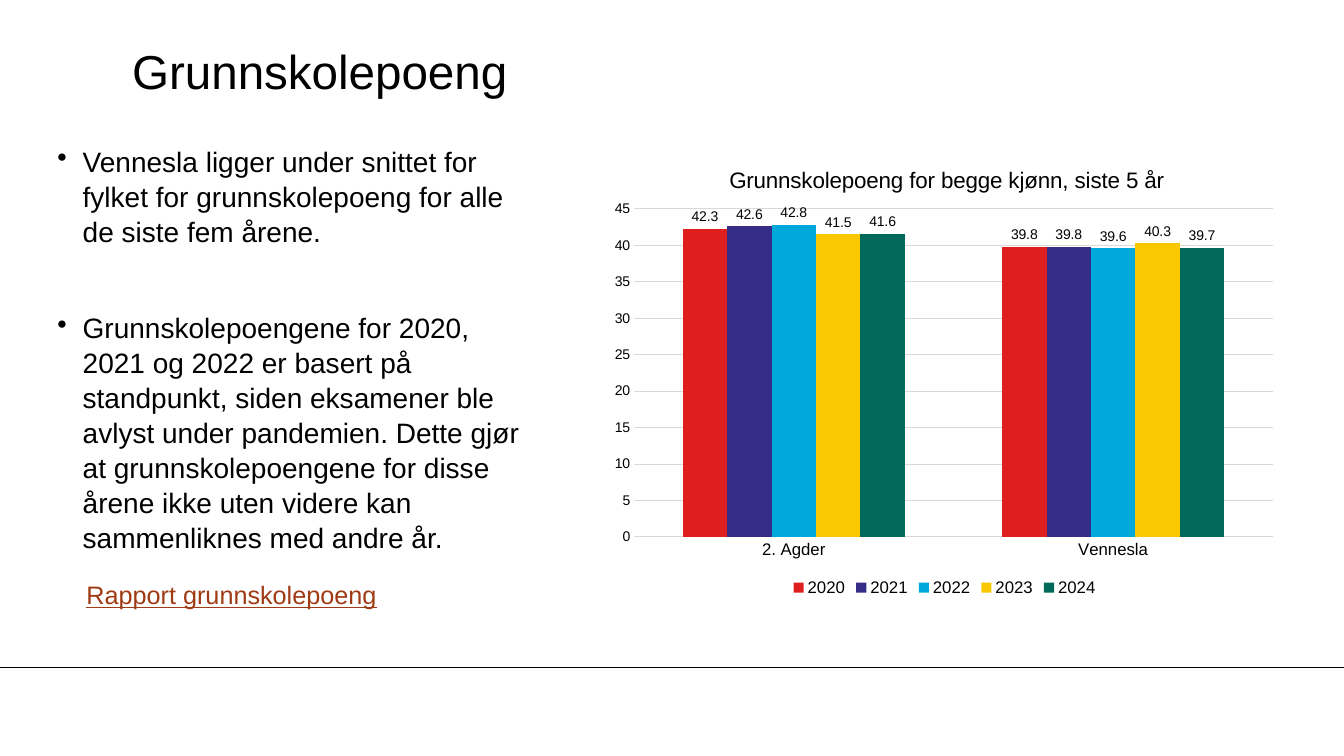
from lxml.etree import SubElement
from pptx import Presentation
from pptx.chart.data import CategoryChartData
from pptx.dml.color import RGBColor
from pptx.enum.chart import XL_CHART_TYPE as ChartType, XL_LABEL_POSITION as LabelPosition
from pptx.enum.chart import XL_LEGEND_POSITION as LegendPosition, XL_TICK_MARK as TickMark
from pptx.enum.shapes import MSO_CONNECTOR as Connector
from pptx.enum.text import MSO_ANCHOR as Anchor
from pptx.oxml.ns import qn
from pptx.util import Inches, Pt

FONT, BLACK, RUST, GREY = "Arial", "000000", "9F3A14", "D9D9D9"
HEADING = "Grunnskolepoeng"
FINDINGS = [
    "Vennesla ligger under snittet for fylket for grunnskolepoeng for alle de siste fem årene.",
    "Grunnskolepoengene for 2020, 2021 og 2022 er basert på standpunkt, siden eksamener ble "
    "avlyst under pandemien. Dette gjør at grunnskolepoengene for disse årene ikke uten videre "
    "kan sammenliknes med andre år.",
]
REPORT = "Rapport grunnskolepoeng"
CHART_TITLE = "Grunnskolepoeng for begge kjønn, siste 5 år"
REGIONS = ["2. Agder", "Vennesla"]
YEARS = [
    ("2020", "DF1F1D", (42.3, 39.8)),
    ("2021", "342C86", (42.6, 39.8)),
    ("2022", "00A9DA", (42.8, 39.6)),
    ("2023", "FAC800", (41.5, 40.3)),
    ("2024", "00695A", (41.6, 39.7)),
]

HEADING_AREA = (9.83, 4.27, 83.25, 10)
FINDINGS_AREA = (4.28, 18.93, 35.4, 53.6)
REPORT_AREA = (5.7, 76, 24.75, 5.33)
CHART_AREA = (44.78, 18.93, 51, 60.53)
FOOTER_RULE = 88.27

deck = Presentation()
deck.slide_width, deck.slide_height = Inches(13.33), Inches(7.5)
slide = deck.slides.add_slide(deck.slide_layouts[6])


def color(value):
    return RGBColor.from_string(value)


def across(percent):
    return int(deck.slide_width * percent / 100)


def down(percent):
    return int(deck.slide_height * percent / 100)


def place(area):
    left, top, width, height = area
    return across(left), down(top), across(width), down(height)


def style(font, size, fill=BLACK):
    font.name, font.size, font.bold = FONT, Pt(size), False
    font.color.rgb = color(fill)


def outline(line, fill):
    line.color.rgb = color(fill)
    line.width = Pt(0.75)


def add_text(area, lines, size, fill=BLACK, inset=True):
    frame = slide.shapes.add_textbox(*place(area)).text_frame
    frame.word_wrap = True
    if not inset:
        frame.margin_left = frame.margin_top = frame.margin_right = frame.margin_bottom = 0
    frame.text = "\n".join(lines)
    for paragraph in frame.paragraphs:
        style(paragraph.font, size, fill)
    return frame


def add_bullet(paragraph):
    properties = paragraph._p.get_or_add_pPr()
    indent = Inches(0.25)
    properties.set("marL", str(indent))
    properties.set("indent", str(-indent))
    bullet = properties.makeelement(qn("a:buChar"), {"char": "•"})
    properties.insert_element_before(bullet, "a:tabLst", "a:defRPr", "a:extLst")


def set_layout(parent, index, **settings):
    layout = parent.find(qn("c:layout"))
    if layout is not None:
        parent.remove(layout)
    layout = parent.makeelement(qn("c:layout"), {})
    parent.insert(index, layout)
    manual = SubElement(layout, qn("c:manualLayout"))
    for tag, value in settings.items():
        SubElement(manual, qn(f"c:{tag}"), val=str(value))


def add_points_chart():
    points = CategoryChartData(number_format="0.0")
    points.categories = REGIONS
    for year, _, values in YEARS:
        points.add_series(year, values)
    chart = slide.shapes.add_chart(ChartType.COLUMN_CLUSTERED, *place(CHART_AREA), points).chart
    style(chart.font, 10)

    title = chart.chart_title
    title.text_frame.text = CHART_TITLE
    style(title.text_frame.paragraphs[0].font, 16)
    set_layout(title._element, 1, xMode="edge", yMode="edge", x=0.18, y=0.04)
    set_layout(chart._chartSpace.chart.plotArea, 0, layoutTarget="inner",
               xMode="edge", yMode="edge", x=0.047, y=0.144, w=0.932, h=0.717)

    chart.has_legend = True
    chart.legend.position = LegendPosition.BOTTOM
    chart.legend.include_in_layout = False
    style(chart.legend.font, 12)

    for axis, size in ((chart.category_axis, 12), (chart.value_axis, 10)):
        axis.major_tick_mark = axis.minor_tick_mark = TickMark.NONE
        style(axis.tick_labels.font, size)
    outline(chart.category_axis.format.line, GREY)
    scale = chart.value_axis
    scale.minimum_scale, scale.maximum_scale, scale.major_unit = 0, 45, 5
    scale.tick_labels.number_format = "0"
    scale.tick_labels.number_format_is_linked = False
    scale.format.line.fill.background()
    outline(scale.major_gridlines.format.line, GREY)

    plot = chart.plots[0]
    plot.gap_width, plot.overlap, plot.vary_by_categories = 219, 0, False
    for series, (_, fill, _) in zip(plot.series, YEARS):
        series.format.fill.solid()
        series.format.fill.fore_color.rgb = color(fill)
        labels = series.data_labels
        labels.show_value = True
        labels.position = LabelPosition.OUTSIDE_END
        style(labels.font, 10)


rule_y = down(FOOTER_RULE)
rule = slide.shapes.add_connector(Connector.STRAIGHT, 0, rule_y, deck.slide_width, rule_y)
outline(rule.line, BLACK)
SubElement(rule._element.spPr, qn("a:effectLst"))

heading = add_text(HEADING_AREA, [HEADING], 34, inset=False)
heading.vertical_anchor = Anchor.MIDDLE

findings = add_text(FINDINGS_AREA, FINDINGS, 20, inset=False)
for number, finding in enumerate(findings.paragraphs):
    add_bullet(finding)
    finding.line_spacing = 1.04
    if number:
        finding.space_before = Pt(44)

report = add_text(REPORT_AREA, [REPORT], 18, RUST)
report.paragraphs[0].font.underline = True

add_points_chart()
deck.save("out.pptx")
